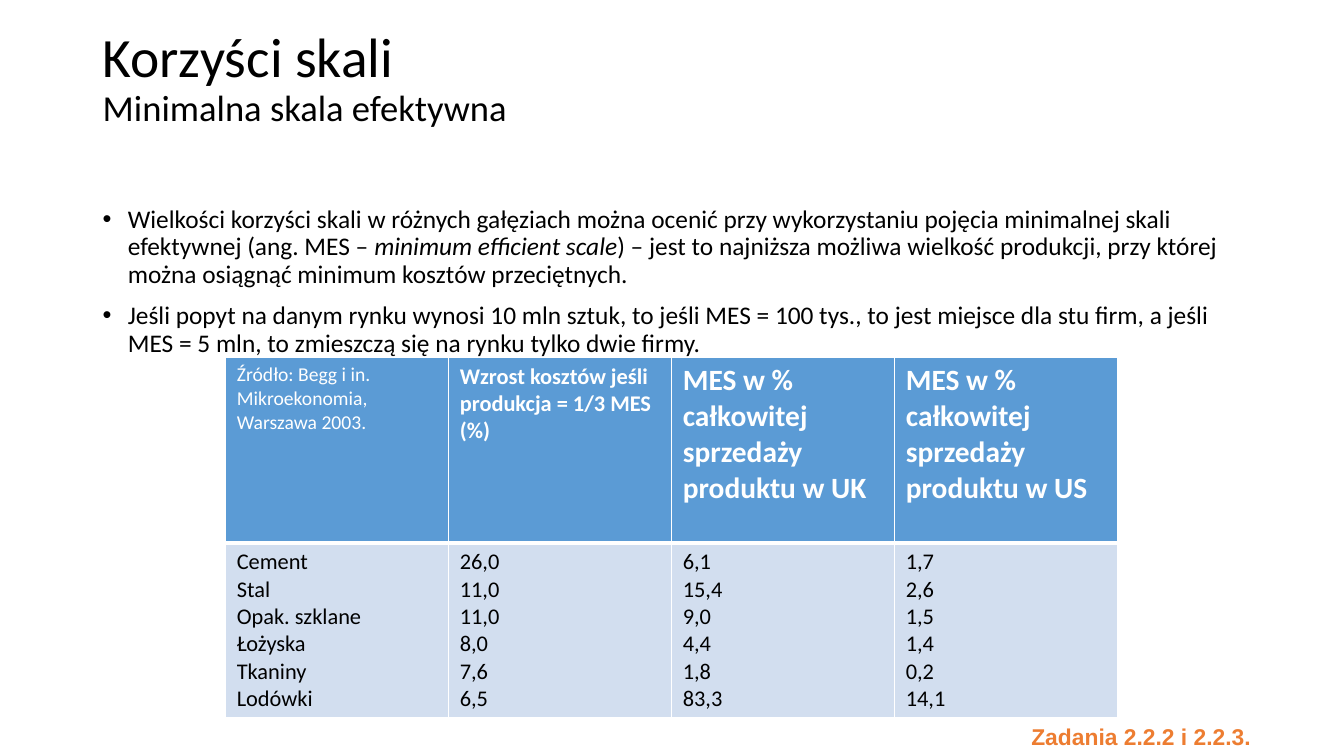
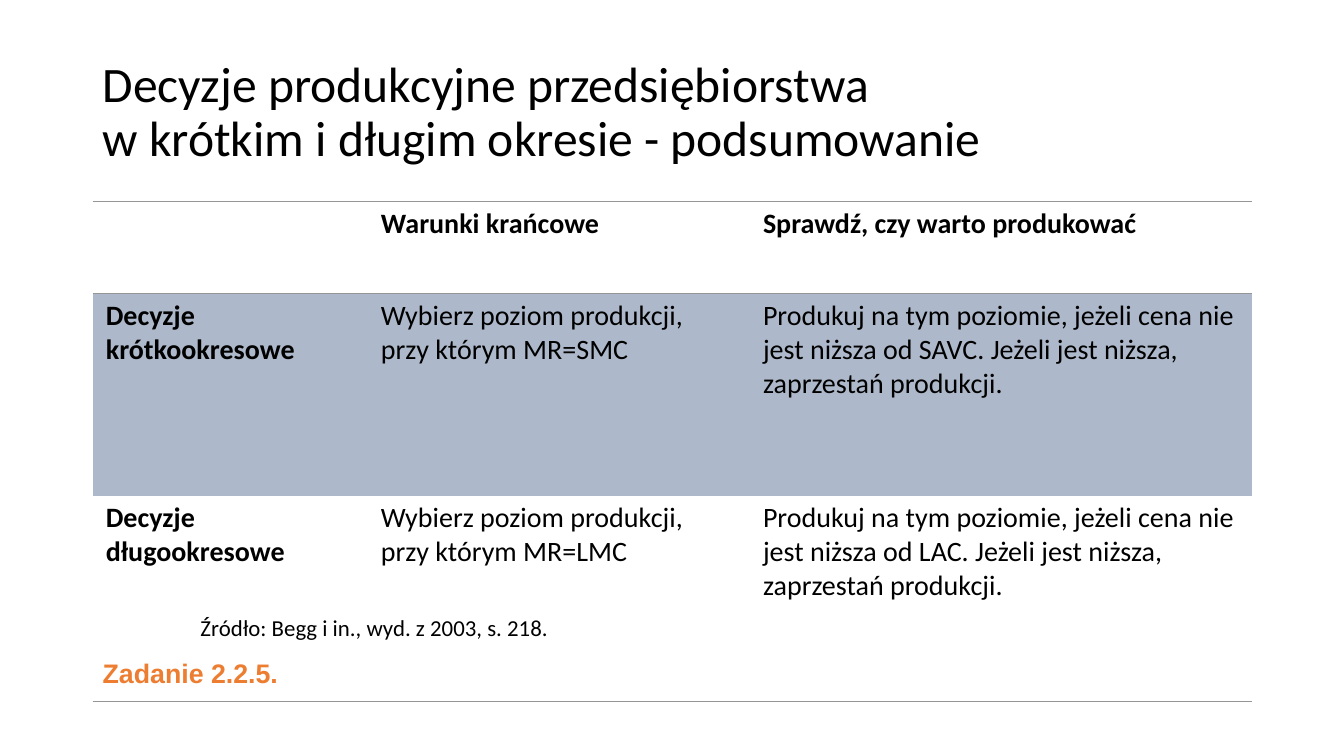
from dataclasses import dataclass
from typing import NamedTuple, Optional

from lxml.etree import SubElement
from pptx import Presentation
from pptx.dml.color import RGBColor
from pptx.enum.text import MSO_ANCHOR, MSO_AUTO_SIZE
from pptx.oxml.ns import qn
from pptx.util import Inches, Pt

WIDE, HIGH = Inches(13.33), Inches(7.5)
BLACK, WHITE, ORANGE = "000000", "FFFFFF", "ED7D31"
BLUE, PALE, SLATE, GREY = "5B9BD5", "D2DEEF", "ADB9CA", "969696"
SIDES = ("L", "R", "T", "B")


class Box(NamedTuple):
    """Left, top, width and height in percent of the slide."""
    x: float
    y: float
    w: float
    h: float

    def place(self) -> tuple[int, int, int, int]:
        return (int(WIDE * self.x / 100), int(HIGH * self.y / 100),
                int(WIDE * self.w / 100), int(HIGH * self.h / 100))


@dataclass(frozen=True)
class Run:
    text: str
    size: float
    color: str = BLACK
    bold: bool = False
    slant: bool = False
    font: str = "Calibri"


@dataclass(frozen=True)
class Edge:
    color: str
    width: float


@dataclass(frozen=True)
class Cell:
    lines: tuple[Run, ...]
    fill: Optional[str]
    edges: dict[str, Edge]


TITLE = Box(6.9, 5.33, 86.25, 19.33)
BODY = Box(6.9, 26.67, 86.25, 63.47)


def paint(color: str) -> RGBColor:
    return RGBColor.from_string(color)


def write(para, runs) -> None:
    for item in runs:
        run = para.add_run()
        run.text = item.text
        font = run.font
        font.name, font.size = item.font, Pt(item.size)
        font.bold, font.italic = item.bold, item.slant
        font.color.rgb = paint(item.color)


def frame(slide, box: Box, wrap: bool = True):
    text = slide.shapes.add_textbox(*box.place()).text_frame
    text.word_wrap = wrap
    text.auto_size = MSO_AUTO_SIZE.NONE if wrap else MSO_AUTO_SIZE.SHAPE_TO_FIT_TEXT
    return text


def title(slide, lines: list[Run], rise: float = 0.05) -> None:
    """Draw a title; rise is the bottom inset that lifts its centre."""
    text = frame(slide, TITLE)
    text.vertical_anchor = MSO_ANCHOR.MIDDLE
    text.margin_bottom = Inches(rise)
    para = text.paragraphs[0]
    para.line_spacing = 0.9
    for num, line in enumerate(lines):
        if num:
            para.add_line_break()
        write(para, [line])


def bullets(slide, items: list[list[Run]]) -> None:
    text = frame(slide, BODY)
    for num, runs in enumerate(items):
        para = text.add_paragraph() if num else text.paragraphs[0]
        para.line_spacing, para.space_before = 0.9, Pt(10)
        write(para, runs)
        props = para._p.get_or_add_pPr()
        props.set("marL", str(Inches(0.25)))
        props.set("indent", str(-Inches(0.25)))
        SubElement(props, qn("a:buFont"), typeface="Arial")
        SubElement(props, qn("a:buChar"), char="•")


def note(slide, box: Box, run: Run) -> None:
    text = frame(slide, box, wrap=False)
    write(text.paragraphs[0], [run])


def border(cell, edges: dict[str, Edge]) -> None:
    props = cell._tc.get_or_add_tcPr()
    for side in SIDES:
        edge = edges.get(side)
        line = SubElement(props, qn(f"a:ln{side}"))
        if edge is None:
            line.set("w", "0")
            SubElement(line, qn("a:noFill"))
        else:
            line.set("w", str(Pt(edge.width)))
            fill = SubElement(line, qn("a:solidFill"))
            SubElement(fill, qn("a:srgbClr"), val=edge.color)


def table(slide, box: Box, cols: list[float], rows: list[float],
          cells: list[list[Cell]], pad: float) -> None:
    """Draw a table; cols and rows are relative shares of the box."""
    left, top, wide, high = box.place()
    grid = slide.shapes.add_table(len(rows), len(cols), left, top, wide, high).table
    grid.first_row = grid.horz_banding = False
    for col, part in zip(grid.columns, cols):
        col.width = int(wide * part / sum(cols))
    for row, part in zip(grid.rows, rows):
        row.height = int(high * part / sum(rows))
    for r, line in enumerate(cells):
        for c, data in enumerate(line):
            cell = grid.cell(r, c)
            cell.margin_left = cell.margin_right = Inches(pad)
            cell.margin_top = cell.margin_bottom = Inches(0.05)
            border(cell, data.edges)
            if data.fill:
                cell.fill.solid()
                cell.fill.fore_color.rgb = paint(data.fill)
            else:
                cell.fill.background()
            text = cell.text_frame
            for num, run in enumerate(data.lines):
                para = text.add_paragraph() if num else text.paragraphs[0]
                write(para, [run])


def scale(slide) -> None:
    title(slide, [Run("Korzyści skali", 39.6),
                  Run("Minimalna skala efektywna", 26.1)], rise=0.72)
    size = 18.1
    bullets(slide, [
        [Run("Wielkości korzyści skali w różnych gałęziach można ocenić przy "
             "wykorzystaniu pojęcia minimalnej skali efektywnej (ang. MES – ", size),
         Run("minimum efficient scale", size, slant=True),
         Run(") – jest to najniższa możliwa wielkość produkcji, przy której można "
             "osiągnąć minimum kosztów przeciętnych.", size)],
        [Run("Jeśli popyt na danym rynku wynosi 10 mln sztuk, to jeśli MES = 100 tys., "
             "to jest miejsce dla stu firm, a jeśli MES = 5 mln, to zmieszczą się "
             "na rynku tylko dwie firmy.", size)],
    ])
    heads = [
        Run("Źródło: Begg i in. Mikroekonomia, Warszawa 2003.", 14, WHITE),
        Run("Wzrost kosztów jeśli produkcja = 1/3 MES (%)", 16, WHITE, True),
        Run("MES w % całkowitej sprzedaży produktu w UK", 21, WHITE, True),
        Run("MES w % całkowitej sprzedaży produktu w US", 21, WHITE, True),
    ]
    goods = [
        ("Cement", "26,0", "6,1", "1,7"),
        ("Stal", "11,0", "15,4", "2,6"),
        ("Opak. szklane", "11,0", "9,0", "1,5"),
        ("Łożyska", "8,0", "4,4", "1,4"),
        ("Tkaniny", "7,6", "1,8", "0,2"),
        ("Lodówki", "6,5", "83,3", "14,1"),
    ]
    thin, thick = Edge(WHITE, 1), Edge(WHITE, 3)
    frames = dict.fromkeys(SIDES, thin)
    top = [Cell((run,), BLUE, {**frames, "B": thick}) for run in heads]
    data = [Cell(tuple(Run(word, 16) for word in col), PALE, {**frames, "T": thick})
            for col in zip(*goods)]
    table(slide, Box(16.8, 47.33, 66.38, 47.6), [1] * 4, [1.84, 1.73],
          [top, data], 0.11)
    note(slide, Box(76, 94.93, 18.1, 5.07),
         Run("Zadania 2.2.2 i 2.2.3.", 16.3, ORANGE, True, font="Arial"))


def choice(slide) -> None:
    title(slide, [Run("Decyzje produkcyjne przedsiębiorstwa", 35.4),
                  Run("w krótkim i długim okresie - podsumowanie", 35.4)])
    rule = Edge(GREY, 1)
    looks = [(None, {"T": rule, "B": rule}), (SLATE, {"T": rule}), (None, {"B": rule})]
    words = [("", "Warunki krańcowe", "Sprawdź, czy warto produkować")]
    for term, cost, floor in (("krótkookresowe", "SMC", "SAVC"),
                              ("długookresowe", "LMC", "LAC")):
        words.append((
            f"Decyzje {term}",
            f"Wybierz poziom produkcji, przy którym MR={cost}",
            f"Produkuj na tym poziomie, jeżeli cena nie jest niższa od {floor}. "
            "Jeżeli jest niższa, zaprzestań produkcji."))
    cells = [[Cell((Run(word, 20, bold=r == 0 or c == 0),) if word else (), fill, edges)
              for c, word in enumerate(line)]
             for r, (line, (fill, edges)) in enumerate(zip(words, looks))]
    table(slide, Box(6.9, 26.67, 86.25, 66.13), [2.73, 3.79, 4.98],
          [0.91, 2, 2.04], cells, 0.13)
    note(slide, Box(6.9, 86.27, 15.23, 5.73),
         Run("Zadanie 2.2.5.", 19.1, ORANGE, True, font="Arial"))
    note(slide, Box(14.18, 80.53, 27.68, 5.07),
         Run("Źródło: Begg i in., wyd. z 2003, s. 218.", 16.3))


def main() -> None:
    deck = Presentation()
    deck.slide_width, deck.slide_height = WIDE, HIGH
    for draw in (scale, choice):
        draw(deck.slides.add_slide(deck.slide_layouts[6]))
    deck.save("out.pptx")


if __name__ == "__main__":
    main()
